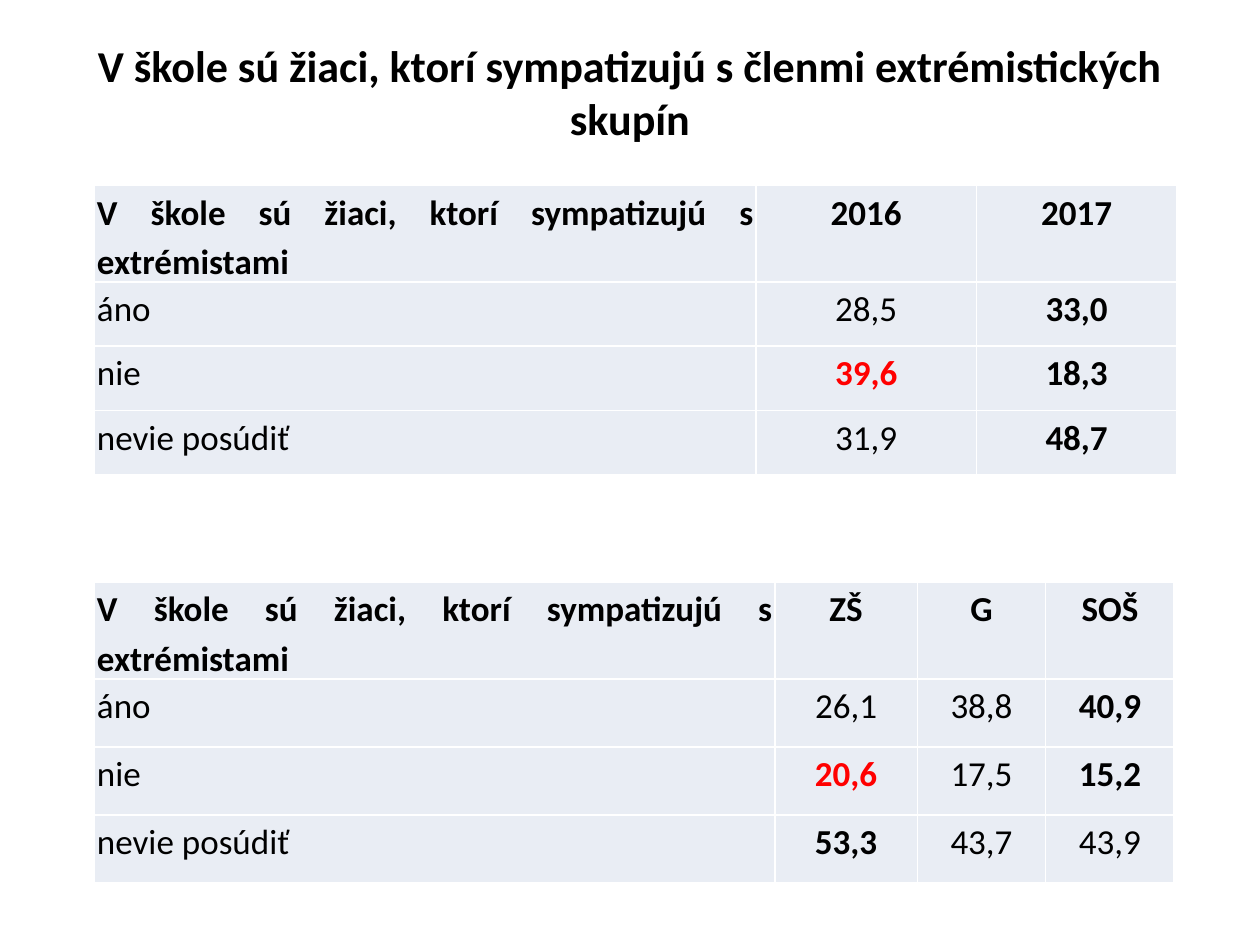
from lxml import etree
from pptx import Presentation
from pptx import util as u
from pptx.dml.color import RGBColor
from pptx.enum import text
from pptx.oxml import ns

BLACK = RGBColor(0x00, 0x00, 0x00)
RED = RGBColor(0xFF, 0x00, 0x00)
WHITE = RGBColor(0xFF, 0xFF, 0xFF)
PALE_BLUE = RGBColor(0xE9, 0xED, 0xF4)

QUESTION = "V škole sú žiaci, ktorí sympatizujú s extrémistami"
ANSWERS = ["áno", "nie", "nevie posúdiť"]


class SurveySlide:
    """Holds the text style and the slide that receives the survey results."""

    def __init__(self, slide, font="Calibri", body_size=20, title_size=25.2):
        self.slide = slide
        self.font = font
        self.body_size = body_size
        self.title_size = title_size

    def set_text(self, paragraph, words, size, bold, color, align):
        paragraph.text = words
        paragraph.alignment = align
        font = paragraph.font
        font.name, font.size, font.bold = self.font, u.Pt(size), bold
        font.color.rgb = color

    def title(self, words, left, top, width, height):
        heading = self.slide.shapes.add_textbox(
            u.Inches(left), u.Inches(top), u.Inches(width), u.Inches(height)).text_frame
        heading.word_wrap = True
        heading.vertical_anchor = text.MSO_ANCHOR.MIDDLE
        self.set_text(heading.paragraphs[0], words, self.title_size, True, BLACK,
                      text.PP_ALIGN.CENTER)

    def border(self, cell):
        properties = cell._tc.get_or_add_tcPr()
        for side in ("lnL", "lnR", "lnT", "lnB"):
            line = etree.SubElement(properties, ns.qn(f"a:{side}"), w=str(u.Pt(1)))
            fill = etree.SubElement(line, ns.qn("a:solidFill"))
            etree.SubElement(fill, ns.qn("a:srgbClr"), val=str(WHITE))

    def cell(self, cell, words, bold, color, align):
        cell.margin_left = cell.margin_right = u.Inches(0.02)
        cell.margin_top = cell.margin_bottom = 0
        self.border(cell)
        cell.fill.solid()
        cell.fill.fore_color.rgb = PALE_BLUE
        paragraph = cell.text_frame.paragraphs[0]
        paragraph.line_spacing = 1.15
        self.set_text(paragraph, words, self.body_size, bold, color, align)

    def table(self, top, widths, row_height, groups, shares, strong, red):
        rows = [[QUESTION, *groups]]
        rows += [[answer, *values] for answer, values in zip(ANSWERS, shares)]
        results = self.slide.shapes.add_table(
            len(rows), len(widths), u.Inches(0.75), u.Inches(top),
            u.Inches(sum(widths)), u.Inches(row_height * len(rows))).table
        for column, width in zip(results.columns, widths):
            column.width = u.Inches(width)
        for r, row in enumerate(rows):
            for c, words in enumerate(row):
                self.cell(results.cell(r, c), words,
                          bold=r == 0 or (r, c) in strong or (r, c) == red,
                          color=RED if (r, c) == red else BLACK,
                          align=text.PP_ALIGN.CENTER if c else text.PP_ALIGN.JUSTIFY)


def main():
    deck = Presentation()
    deck.slide_width, deck.slide_height = u.Inches(10), u.Inches(7.5)
    survey = SurveySlide(deck.slides.add_slide(deck.slide_layouts[6]))
    survey.title("V škole sú žiaci, ktorí sympatizujú s členmi extrémistických skupín",
                 0.5, 0.3, 9, 0.85)
    survey.table(1.47, [5.25, 1.75, 1.59], 0.51, ["2016", "2017"],
                 [["28,5", "33,0"], ["39,6", "18,3"], ["31,9", "48,7"]],
                 strong={(1, 2), (2, 2), (3, 2)}, red=(2, 1))
    survey.table(4.62, [5.4, 1.13, 1.02, 1.02], 0.54, ["ZŠ", "G", "SOŠ"],
                 [["26,1", "38,8", "40,9"], ["20,6", "17,5", "15,2"],
                  ["53,3", "43,7", "43,9"]],
                 strong={(1, 3), (2, 3), (3, 1)}, red=(2, 1))
    deck.save("out.pptx")


if __name__ == "__main__":
    main()
